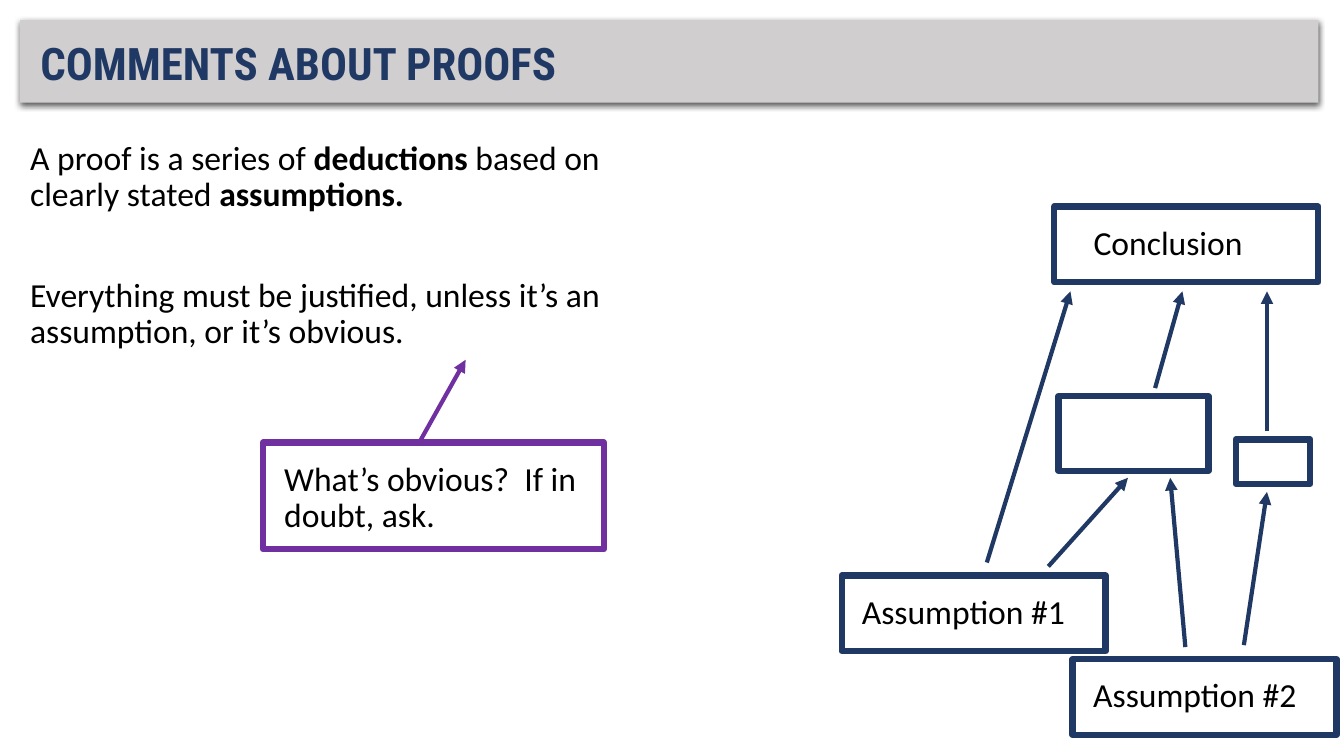
"""Build a slide on proofs with a diagram leading from assumptions to a conclusion."""
import pptx
import pptx.dml.color
import pptx.enum.shapes
import pptx.enum.text
import pptx.oxml
import pptx.util
from lxml import etree

Pt = pptx.util.Pt
NAVY = pptx.dml.color.RGBColor(0x20, 0x38, 0x64)
PURPLE = pptx.dml.color.RGBColor(0x70, 0x30, 0xA0)
GREY = pptx.dml.color.RGBColor(0xD0, 0xCE, 0xCE)
BLACK = pptx.dml.color.RGBColor(0, 0, 0)
RECTANGLE = pptx.enum.shapes.MSO_SHAPE.RECTANGLE
NAMESPACE = "http://schemas.openxmlformats.org/drawingml/2006/main"

TITLE = "COMMENTS ABOUT PROOFS"
TITLE_AREA = (21.6, 20.2, 923.8, 54)
BAR_AREA = (14.4, 14.4, 927.4, 59)
BODY_AREA = (14.4, 97.2, 440.6, 432.7)
BODY = [
    (10, [("A proof is a series of ", False), ("deductions", True),
          (" based on clearly stated ", False), ("assumptions.", True)]),
    (46, [("Everything must be justified, unless it’s an assumption, or it’s obvious.", False)]),
]

# (text, area, left inset, colour)
BOXES = [
    ("Assumption #1", (601.2, 411.1, 188.6, 54), 14.4, NAVY),
    ("Assumption #2", (766.1, 470.9, 188.6, 54), 14.8, NAVY),
    ("Conclusion", (753.1, 147.6, 188.6, 54), 28, NAVY),
    ("", (756, 283, 107.3, 53.3), 0, NAVY),
    ("", (882.7, 313.9, 53.3, 31.7), 0, NAVY),
    ("What’s obvious?  If in doubt, ask.", (187.9, 316.1, 243.4, 76.3), 15.1, PURPLE),
]
ARROWS = [
    ((704.9, 401.8), (764.6, 208.1), NAVY),
    ((888.5, 460.8), (905, 351.4), NAVY),
    ((748.8, 404.6), (805.7, 341.3), NAVY),
    ((846.7, 462.2), (835.9, 341.3), NAVY),
    ((825.1, 277.2), (844.6, 208.1), NAVY),
    ((905, 308.2), (905, 208.1), NAVY),
    ((299.5, 316.1), (332.6, 257), PURPLE),
]
SHADOW = (
    f'<a:effectLst xmlns:a="{NAMESPACE}"><a:outerShdw blurRad="57150" dist="19050" '
    'dir="5400000" algn="ctr" rotWithShape="0"><a:srgbClr val="000000">'
    '<a:alpha val="63000"/></a:srgbClr></a:outerShdw></a:effectLst>'
)


def points(values):
    return [Pt(value) for value in values]


def write_runs(paragraph, runs, size=24, font_name="Calibri", color=BLACK, before=10):
    paragraph.alignment = pptx.enum.text.PP_ALIGN.LEFT
    paragraph.line_spacing = 0.9
    paragraph.space_before = Pt(before)
    for text, bold in runs:
        run = paragraph.add_run()
        run.text = text
        run.font.size = Pt(size)
        run.font.name = font_name
        run.font.bold = bold
        run.font.color.rgb = color


def add_title(slide):
    bar = slide.shapes.add_shape(RECTANGLE, *points(BAR_AREA))
    bar.fill.solid()
    bar.fill.fore_color.rgb = GREY
    bar.line.fill.background()
    bar.element.spPr.append(pptx.oxml.parse_xml(SHADOW))

    title = slide.shapes.title
    title.left, title.top, title.width, title.height = points(TITLE_AREA)
    title.element.addprevious(bar.element)
    frame = title.text_frame
    frame.vertical_anchor = pptx.enum.text.MSO_ANCHOR.MIDDLE
    frame.auto_size = pptx.enum.text.MSO_AUTO_SIZE.NONE
    write_runs(frame.paragraphs[0], [(TITLE, True)], 32, "Roboto Condensed", NAVY, 0)


def add_body(slide):
    frame = slide.shapes.add_textbox(*points(BODY_AREA)).text_frame
    frame.word_wrap = True
    for index, (before, runs) in enumerate(BODY):
        paragraph = frame.add_paragraph() if index else frame.paragraphs[0]
        write_runs(paragraph, runs, before=before)


def add_box(slide, text, area, inset, color):
    box = slide.shapes.add_shape(RECTANGLE, *points(area))
    box.shadow.inherit = False
    box.fill.background()
    box.line.color.rgb = color
    box.line.width = Pt(4.5)
    if text:
        frame = box.text_frame
        frame.word_wrap = True
        frame.vertical_anchor = pptx.enum.text.MSO_ANCHOR.TOP
        frame.margin_left = Pt(inset)
        frame.margin_top = Pt(14)
        write_runs(frame.paragraphs[0], [(text, False)])


def add_arrow(slide, start, end, color):
    arrow = slide.shapes.add_connector(
        pptx.enum.shapes.MSO_CONNECTOR.STRAIGHT, *points(start + end))
    arrow.line.color.rgb = color
    arrow.line.width = Pt(3)
    line = arrow.line._get_or_add_ln()
    etree.SubElement(line, f"{{{NAMESPACE}}}tailEnd", type="triangle")
    etree.SubElement(arrow.element.spPr, f"{{{NAMESPACE}}}effectLst")


def main():
    presentation = pptx.Presentation()
    presentation.slide_width = Pt(960)
    presentation.slide_height = Pt(540)
    slide = presentation.slides.add_slide(presentation.slide_layouts[5])
    add_title(slide)
    add_body(slide)
    for arrow in ARROWS:
        add_arrow(slide, *arrow)
    for box in BOXES:
        add_box(slide, *box)
    presentation.save("out.pptx")


if __name__ == "__main__":
    main()
